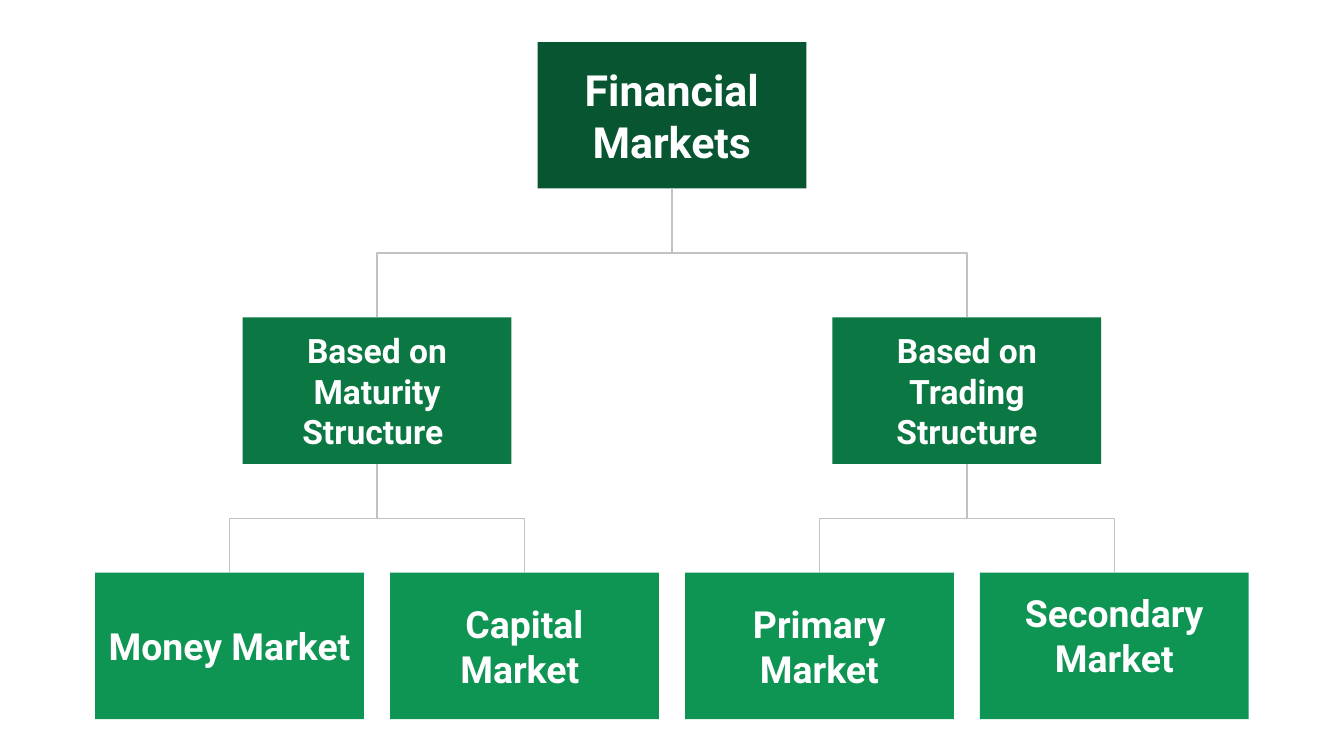
import pptx
import pptx.dml.color
import pptx.enum.shapes
import pptx.enum.text
import pptx.util
from lxml import etree

Pt = pptx.util.Pt

BOX_WIDTH, BOX_HEIGHT = 144, 78.5
ROOT_TOP, BASIS_TOP, MARKET_TOP = 22.5, 170, 306.75
FIRST_MARKET_LEFT, MARKET_PITCH = 51, 158
BOTTOM_SITE, TOP_SITE = 2, 0

# Each basis of classification: its label, then (market, bottom inset)
BASES = [
    ("Based on Maturity Structure ", [("Money Market ", 7.2), ("Capital Market ", 7.2)]),
    ("Based on Trading Structure", [("Primary Market", 7.2), ("Secondary Market", 19)]),
]


def color(hex_string):
    return pptx.dml.color.RGBColor.from_string(hex_string)


class Chart:
    """Style and current slide of the hierarchy."""

    font = "Roboto"
    text_color = "FFFFFF"
    line_color = "C2C2C2"
    line_width = 0.75
    inset = 7.2

    def __init__(self, slide):
        self.slide = slide

    def box(self, label, left, top, fill, size, bottom_inset=inset):
        box = self.slide.shapes.add_shape(
            pptx.enum.shapes.MSO_SHAPE.RECTANGLE,
            Pt(left), Pt(top), Pt(BOX_WIDTH), Pt(BOX_HEIGHT))
        box.shadow.inherit = False
        box.fill.solid()
        box.fill.fore_color.rgb = color(fill)
        box.line.fill.background()

        frame = box.text_frame
        frame.text = label
        frame.word_wrap = True
        frame.vertical_anchor = pptx.enum.text.MSO_ANCHOR.MIDDLE
        frame.margin_left = frame.margin_right = frame.margin_top = Pt(self.inset)
        frame.margin_bottom = Pt(bottom_inset)
        paragraph = frame.paragraphs[0]
        paragraph.alignment = pptx.enum.text.PP_ALIGN.CENTER
        font = paragraph.runs[0].font
        font.name, font.size, font.bold = self.font, Pt(size), True
        font.color.rgb = color(self.text_color)
        return box

    def branch(self, parent, child):
        """Elbow from the bottom of the parent to the top of the child."""
        branch = self.slide.shapes.add_connector(
            pptx.enum.shapes.MSO_CONNECTOR.ELBOW, 0, 0, Pt(1), Pt(1))
        branch.begin_connect(parent, BOTTOM_SITE)
        branch.end_connect(child, TOP_SITE)
        branch.line.color.rgb = color(self.line_color)
        branch.line.width = Pt(self.line_width)
        properties = branch._element.spPr
        etree.SubElement(properties, pptx.oxml.ns.qn("a:effectLst"))

        # Turn the elbow so that it leaves and arrives vertically
        start_x = parent.left + parent.width // 2
        end_x = child.left + child.width // 2
        start_y, end_y = parent.top + parent.height, child.top
        drop, reach = end_y - start_y, abs(end_x - start_x)
        branch.left = (start_x + end_x - drop) // 2
        branch.top = (start_y + end_y - reach) // 2
        branch.width, branch.height = drop, reach
        to_right = end_x > start_x
        transform = properties.xfrm
        transform.set("rot", str((270 if to_right else 90) * 60000))
        transform.set("flipH", "1" if to_right else "0")
        transform.set("flipV", "0")


def main():
    presentation = pptx.Presentation()
    presentation.slide_width, presentation.slide_height = Pt(720), Pt(405)
    blank = presentation.slide_layouts[6]
    chart = Chart(presentation.slides.add_slide(blank))

    # Top level
    root_left = FIRST_MARKET_LEFT + 1.5 * MARKET_PITCH
    root = chart.box("Financial Markets", root_left, ROOT_TOP, "085631", 23)

    # Each basis stands midway above its two markets
    for i, (basis_label, markets) in enumerate(BASES):
        first_left = FIRST_MARKET_LEFT + 2 * i * MARKET_PITCH
        basis = chart.box(basis_label, first_left + MARKET_PITCH / 2,
                          BASIS_TOP, "0B7743", 18)
        chart.branch(root, basis)
        for j, (market_label, bottom_inset) in enumerate(markets):
            market = chart.box(market_label, first_left + j * MARKET_PITCH,
                               MARKET_TOP, "0E9453", 20, bottom_inset)
            chart.branch(basis, market)

    presentation.save("out.pptx")


if __name__ == "__main__":
    main()
